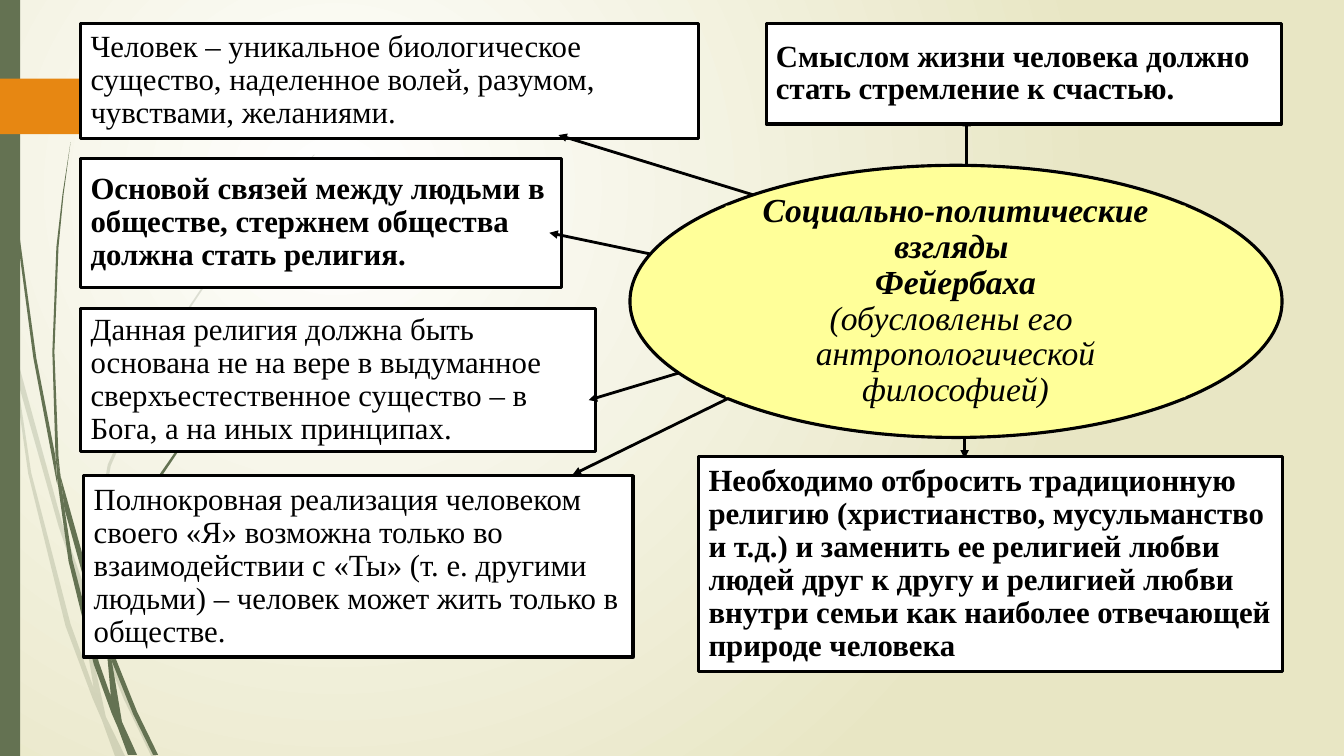
from lxml.etree import SubElement
from pptx import Presentation
from pptx.dml.color import RGBColor
from pptx.enum.shapes import MSO_CONNECTOR as Line, MSO_SHAPE as Shape
from pptx.enum.text import MSO_ANCHOR as Anchor, PP_ALIGN as Align
from pptx.oxml.ns import qn
from pptx.util import Pt

COLORS = {"ink": "000000", "paper": "FFFFFF", "sand": "E8E6C4",
          "moss": "647252", "orange": "E78712", "lemon": "FFFF99"}

# Grass blades: outline points, clockwise
PALE_BLADES = [
    [(0, 203), (6.5, 231.8), (7.9, 252), (7.2, 247.7), (0, 215.3)],
    [(10.1, 248.4), (44.6, 374.4), (61.2, 421.9), (66.2, 437), (91.4, 498.2), (111.6, 540),
     (108, 540), (88.6, 499.7), (63.4, 439.2), (60.5, 431.3), (41.8, 375.8), (12.2, 270.7)],
    [(7.9, 252), (12.2, 270.7), (22.3, 337.7), (50.4, 445.7), (67, 491.8), (62.6, 465.1),
     (60.5, 431.3), (63.4, 439.2), (65.5, 465.1), (75.6, 511.9), (89.3, 540), (82.1, 540),
     (72.7, 514.1), (66.2, 499), (46.8, 447.1), (20.2, 338.4)],
    [(63.4, 420.5), (79.2, 332.6), (115.2, 251.3), (164.9, 176.4), (193, 142.6),
     (208.8, 126), (224.6, 110.9), (224.6, 110.2), (208.1, 126), (193, 141.8),
     (164.2, 175.7), (113.8, 250.6), (77, 331.9), (61.2, 420.5), (63.4, 429.1)],
]
DARK_BLADES = [
    [(2.2, 0), (2.9, 34.6), (5, 79.2), (12.2, 167.8), (23.8, 255.6), (40.3, 343.4),
     (41, 346.3), (39.6, 326.2), (25.9, 255.6), (13.7, 167), (5.8, 78.5), (3.6, 34.6),
     (2.9, 0)],
    [(43.2, 339.8), (67, 424.8), (76.3, 454.3), (81.4, 467.3), (97.9, 508.3), (113, 539.3),
     (109.4, 539.3), (95, 509.8), (79.9, 472.3), (76.3, 464.4), (63.4, 426.2), (46.1, 363.6)],
    [(39.6, 323.3), (43.2, 339.8), (46.1, 363.6), (51.8, 400.3), (70.6, 473), (79.2, 497.5),
     (76.3, 464.4), (79.9, 472.3), (87.1, 515.5), (97.9, 539.3), (91.4, 539.3),
     (84.2, 519.8), (79.9, 509.8), (67, 474.5), (49, 401), (41, 343.4)],
    [(43.2, 339.8), (41.8, 326.2), (38.9, 251.3), (41.8, 176.4), (45.4, 139), (50.4, 101.5),
     (44.6, 139), (40.3, 176.4), (37.4, 251.3), (39.6, 323.3)],
    [(79.9, 455.8), (90, 397.4), (113.8, 342.7), (147.6, 292.3), (166.3, 269.3),
     (176.4, 258.5), (187.9, 247.7), (176.4, 257.8), (166.3, 268.6), (146.9, 291.6),
     (112.3, 341.3), (87.8, 396.7), (76.3, 454.3), (79.2, 461.5)],
]

# Each box: left, top, width, height, bold, text
UPPER_BOXES = [
    (57.6, 16.6, 441.4, 82.1, False, "Человек – уникальное биологическое существо, наделенное "
     "волей, разумом, чувствами, желаниями."),
    (57.6, 113, 343.4, 92.2, True, "Основой связей между людьми в обществе, стержнем "
     "общества должна стать религия."),
    (57.6, 220.3, 367.9, 102.2, False, "Данная религия должна быть основана не на вере в "
     "выдуманное сверхъестественное существо – в Бога, а на иных принципах."),
]
LOWER_BOXES = [
    (59.8, 339.8, 392.4, 129.6, False, "Полнокровная реализация человеком своего «Я» возможна "
     "только во взаимодействии с «Ты» (т. е. другими людьми) – человек может жить только в "
     "обществе."),
    (499, 326.2, 416.9, 153.4, True, "Необходимо отбросить традиционную религию (христианство, "
     "мусульманство и т.д.) и заменить ее религией любви людей друг к другу и религией любви "
     "внутри семьи как наиболее отвечающей природе человека"),
    (547.2, 16.6, 367.9, 72, True, "Смыслом жизни человека должно стать стремление к счастью."),
]
ARROWS = [
    (690.5, 122.4, 690.5, 84.2), (546.5, 141.8, 398.9, 96.5), (471.6, 182.9, 392.4, 166.3),
    (489.6, 265, 420.5, 285.8), (520.6, 284.4, 409, 339.1), (689, 311.8, 689, 327.6),
]
TOPIC = [
    ("Социально-политические взгляды ", True), ("Фейербаха", True),
    ("(обусловлены его ", False), ("антропологической философией)", False),
]


def rgb(name):
    return RGBColor.from_string(COLORS[name])


class Painter:
    """Holds the text style and the page being drawn."""

    font = {"name": "Times New Roman"}
    spacing = 0.89
    outline = 2.25

    def __init__(self, page):
        self.page = page

    def background(self, inner, outer):
        """Radial gradient centred a quarter of the way in from the top left."""
        fill = self.page.background.fill
        fill.gradient()
        for stop, name, position in zip(fill.gradient_stops, (inner, outer), (0, 1)):
            stop.color.rgb = rgb(name)
            stop.position = position
        gradient = self.page._element.find(".//" + qn("a:gradFill"))
        gradient.remove(gradient.find(qn("a:lin")))
        circle = SubElement(gradient, qn("a:path"), path="circle")
        SubElement(circle, qn("a:fillToRect"), l="50000", t="50000", r="100000", b="100000")

    def paint(self, shape, fill, line=None):
        shape.shadow.inherit = False
        shape.fill.solid()
        shape.fill.fore_color.rgb = rgb(fill)
        if line:
            shape.line.color.rgb = rgb(line)
            shape.line.width = Pt(self.outline)
        else:
            shape.line.fill.background()
        return shape

    def shape(self, kind, place, fill, line=None):
        box = self.page.shapes.add_shape(kind, *map(Pt, place))
        return self.paint(box, fill, line)

    def blade(self, points, opacity=100):
        corners = [(Pt(x), Pt(y)) for x, y in points]
        builder = self.page.shapes.build_freeform(*corners[0])
        builder.add_line_segments(corners[1:], close=True)
        blade = self.paint(builder.convert_to_shape(), "moss")
        if opacity < 100:
            color = blade._element.spPr.find(qn("a:solidFill"))[0]
            SubElement(color, qn("a:alpha"), val=str(opacity * 1000))

    def add_text(self, box, lines, align, **style):
        """Fill the box with one paragraph for each (text, bold) pair."""
        frame = box.text_frame
        frame.word_wrap = True
        frame.vertical_anchor = Anchor.MIDDLE
        for index, (text, bold) in enumerate(lines):
            para = frame.add_paragraph() if index else frame.paragraphs[0]
            para.alignment = align
            para.line_spacing = self.spacing
            span = para.add_run()
            span.text = text
            for key, value in {**self.font, **style, "bold": bold}.items():
                setattr(span.font, key, value)
            span.font.color.rgb = rgb("ink")

    def text_box(self, left, top, width, height, bold, text):
        box = self.shape(Shape.RECTANGLE, (left, top, width, height), "paper", "ink")
        self.add_text(box, [(text, bold)], Align.LEFT, size=Pt(22))

    def arrow(self, *ends):
        arrow = self.page.shapes.add_connector(Line.STRAIGHT, *map(Pt, ends))
        arrow.line.color.rgb = rgb("ink")
        arrow.line.width = Pt(2)
        properties = arrow._element.spPr
        SubElement(properties.find(qn("a:ln")), qn("a:tailEnd"), type="triangle")
        SubElement(properties, qn("a:effectLst"))


def main():
    deck = Presentation()
    deck.slide_width, deck.slide_height = Pt(960), Pt(540)
    painter = Painter(deck.slides.add_slide(deck.slide_layouts[6]))

    painter.background("paper", "sand")
    for blade in PALE_BLADES:
        painter.blade(blade, opacity=20)
    for blade in DARK_BLADES:
        painter.blade(blade)
    painter.shape(Shape.RECTANGLE, (0, 0, 14.4, 540), "moss")
    painter.shape(Shape.PENTAGON, (0, 56.2, 125.3, 39.6), "orange")

    for box in UPPER_BOXES:
        painter.text_box(*box)
    for ends in ARROWS:
        painter.arrow(*ends)
    for box in LOWER_BOXES:
        painter.text_box(*box)

    painter.shape(Shape.OVAL, (450, 118.1, 465.8, 194.4), "lemon", "ink")
    topic = painter.shape(Shape.RECTANGLE, (518.4, 146.9, 328.3, 136.8), "lemon")
    painter.add_text(topic, TOPIC, Align.CENTER, size=Pt(24), italic=True)

    deck.save("out.pptx")


if __name__ == "__main__":
    main()
